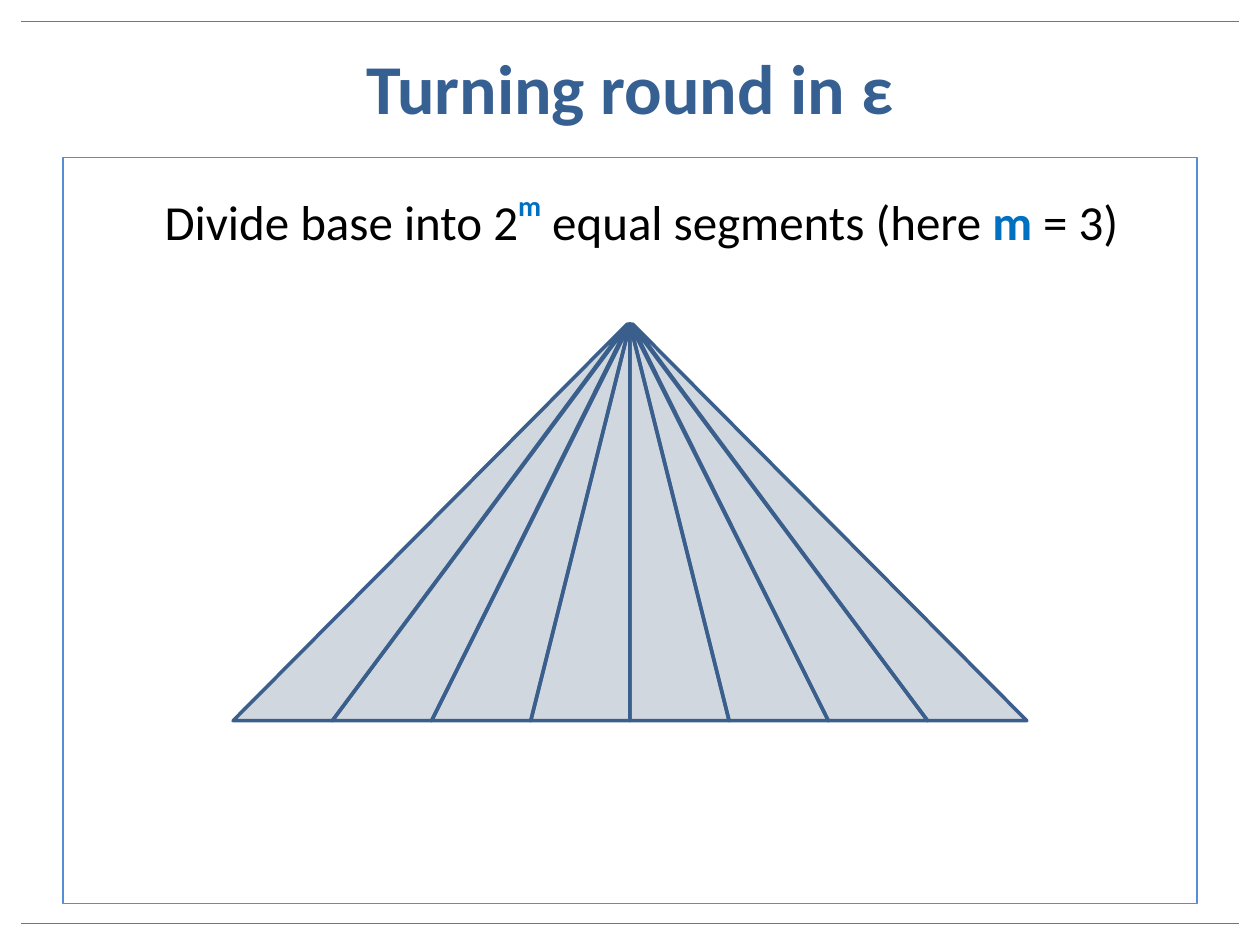
from lxml.etree import SubElement
from pptx import Presentation
from pptx.dml.color import RGBColor
from pptx.enum.shapes import MSO_CONNECTOR, MSO_SHAPE
from pptx.enum.text import MSO_ANCHOR, PP_ALIGN
from pptx.oxml.ns import qn
from pptx.util import Inches, Pt

# Content
TITLE = [("Turning round in ε", {"color": "376092", "bold": True})]
KEY = {"color": "0070C0", "bold": True}
STEP = [
    ("Divide base into 2", {}),
    ("m", {**KEY, "raised": 50}),
    (" equal segments (here ", {}),
    ("m ", KEY),
    ("= 3)", {}),
]

# Geometry in inches
RULES = [0.17, 7.33]
CENTER, TOP, BASE = 5, 2.57, 5.72
M = 3
HALF = 2 ** M // 2
HALF_WIDTH = 3.15
SEGMENT = HALF_WIDTH / HALF
APEX_SHIFTS = [0, 0, 0.01, 0.02]  # from the middle outwards


def rgb(value):
    return RGBColor.from_string(value)


def style_line(shape, color, width):
    shape.line.color.rgb = rgb(color)
    shape.line.width = Pt(width)


def add_text(frame, spans, size, anchor, margins, space_before=0):
    frame.word_wrap = True
    frame.vertical_anchor = anchor
    (frame.margin_left, frame.margin_top,
     frame.margin_right, frame.margin_bottom) = map(Inches, margins)
    para = frame.paragraphs[0]
    para.alignment = PP_ALIGN.CENTER
    para.space_before = Pt(space_before)
    for text, look in spans:
        span = para.add_run()
        span.text = text
        span.font.name = "Calibri"
        span.font.size = Pt(size)
        span.font.bold = look.get("bold", False)
        span.font.color.rgb = rgb(look.get("color", "000000"))
        if "raised" in look:
            span.font._element.set("baseline", str(look["raised"] * 1000))


def style_slice(shape):
    shape.shadow.inherit = False
    shape.fill.solid()
    shape.fill.fore_color.rgb = rgb("17375E")
    color = shape._element.spPr.find(qn("a:solidFill"))[0]
    SubElement(color, qn("a:alpha")).set("val", "20000")
    style_line(shape, "3A5F8C", 2)


def add_slice(page, index, side):
    """Add one slice; index counts outwards, side is -1 left or 1 right."""
    inner = CENTER + side * index * SEGMENT
    outer = inner + side * SEGMENT
    if index == 0:
        shape = page.shapes.add_shape(
            MSO_SHAPE.ISOSCELES_TRIANGLE, Inches(min(inner, outer)), Inches(TOP),
            Inches(SEGMENT), Inches(BASE - TOP))
        shape.adjustments[0] = 1
        if side > 0:
            shape._element.spPr.xfrm.set("flipH", "1")
    else:
        apex = CENTER + side * APEX_SHIFTS[index]
        builder = page.shapes.build_freeform(Inches(outer), Inches(BASE))
        builder.add_line_segments(
            [(Inches(apex), Inches(TOP)), (Inches(inner), Inches(BASE))], close=True)
        shape = builder.convert_to_shape()
    style_slice(shape)


def main():
    deck = Presentation()
    deck.slide_width, deck.slide_height = Inches(10), Inches(7.5)
    page = deck.slides.add_slide(deck.slide_layouts[6])

    # Rules at top and bottom
    for y in RULES:
        rule = page.shapes.add_connector(
            MSO_CONNECTOR.STRAIGHT, Inches(0.17), Inches(y), Inches(9.83), Inches(y))
        style_line(rule, "4B7EBC", 0.75)
        SubElement(rule._element.spPr, qn("a:effectLst"))

    # Title
    title = page.shapes.add_textbox(Inches(0.5), Inches(0.25), Inches(9), Inches(0.87))
    add_text(title.text_frame, TITLE, 40, MSO_ANCHOR.MIDDLE, (0.1, 0.05, 0.1, 0.05))

    # Framed body
    body = page.shapes.add_shape(
        MSO_SHAPE.RECTANGLE, Inches(0.5), Inches(1.25), Inches(9), Inches(5.92))
    body.shadow.inherit = False
    body.fill.background()
    style_line(body, "558ED5", 0.75)
    add_text(body.text_frame, STEP, 28, MSO_ANCHOR.TOP, (0.28, 0.24, 0.1, 0.05), 5.6)

    # Triangle cut into equal base segments, left half then right half
    for side in (-1, 1):
        for index in reversed(range(HALF)):
            add_slice(page, index, side)

    deck.save("out.pptx")


if __name__ == "__main__":
    main()
